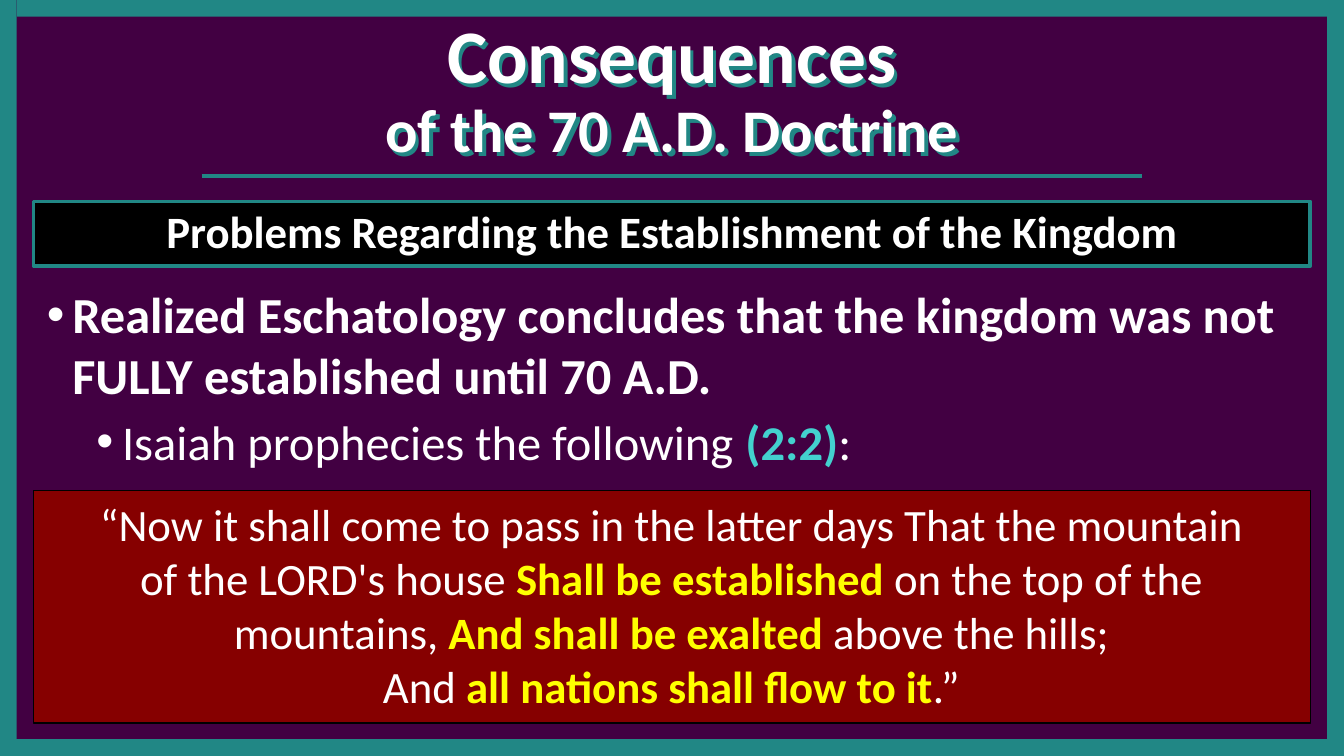
from typing import NamedTuple, Optional

import pptx
import pptx.dml.color
import pptx.enum.shapes
import pptx.enum.text
import pptx.oxml
import pptx.oxml.ns
import pptx.util
from pptx.util import Inches

COLORS = {
    "purple": "420042",
    "teal": "218785",
    "aqua": "43D1CE",
    "black": "000000",
    "maroon": "860000",
    "white": "FFFFFF",
    "yellow": "FFFF00",
}
FONT = "Calibri"
WIDTH = 10
HEIGHT = WIDTH * 9 / 16
BORDER = WIDTH / 80
MARGIN = 2 * BORDER
PANEL_WIDTH = WIDTH - 2 * MARGIN
NAMESPACE = pptx.oxml.ns.nsdecls("a")


class Area(NamedTuple):
    left: float
    top: float
    width: float
    height: float


class Panel(NamedTuple):
    area: Area
    fill: str
    line: Optional[str] = None
    line_width: float = 0


class Span(NamedTuple):
    text: str
    size: float
    color: str = "white"
    bold: bool = False


class Para(NamedTuple):
    spans: list[Span]
    bullet_indent: Optional[float] = None
    level: int = 0
    space_before: float = 0
    line_spacing: float = 1.0


def rgb(name: str) -> pptx.dml.color.RGBColor:
    return pptx.dml.color.RGBColor.from_string(COLORS[name])


def draw_panel(page, panel: Panel) -> None:
    shape = page.shapes.add_shape(
        pptx.enum.shapes.MSO_SHAPE.RECTANGLE, *map(Inches, panel.area))
    shape.shadow.inherit = False
    shape.fill.solid()
    shape.fill.fore_color.rgb = rgb(panel.fill)
    if panel.line:
        shape.line.color.rgb = rgb(panel.line)
        shape.line.width = pptx.util.Pt(panel.line_width)
    else:
        shape.line.fill.background()


def add_span(paragraph, span: Span) -> None:
    for index, piece in enumerate(span.text.split("\n")):
        if index:
            paragraph.add_line_break()
        if piece:
            run = paragraph.add_run()
            run.text = piece
            run.font.name = FONT
            run.font.size = pptx.util.Pt(span.size)
            run.font.bold = span.bold
            run.font.color.rgb = rgb(span.color)


def add_bullet(paragraph, indent: float) -> None:
    properties = paragraph._p.get_or_add_pPr()
    properties.set("marL", str(Inches(indent)))
    properties.set("indent", str(Inches(-0.19)))
    properties.append(pptx.oxml.parse_xml(
        f'<a:buFont {NAMESPACE} typeface="Arial"/>'))
    properties.append(pptx.oxml.parse_xml(
        f'<a:buChar {NAMESPACE} char="•"/>'))


def draw_text(page, area: Area, paras: list[Para], middle: bool = False):
    box = page.shapes.add_textbox(*map(Inches, area))
    frame = box.text_frame
    frame.word_wrap = True
    anchors = pptx.enum.text.MSO_ANCHOR
    frame.vertical_anchor = anchors.MIDDLE if middle else anchors.TOP
    for index, para in enumerate(paras):
        paragraph = frame.add_paragraph() if index else frame.paragraphs[0]
        paragraph.level = para.level
        paragraph.line_spacing = para.line_spacing
        if index:
            paragraph.space_before = pptx.util.Pt(para.space_before)
        if para.bullet_indent is None:
            paragraph.alignment = pptx.enum.text.PP_ALIGN.CENTER
        else:
            add_bullet(paragraph, para.bullet_indent)
        for span in para.spans:
            add_span(paragraph, span)
    return box


def add_text_shadow(box, color: str) -> None:
    box._element.spPr.append(pptx.oxml.parse_xml(
        f'<a:effectLst {NAMESPACE}><a:outerShdw dist="{Inches(0.04)}" '
        f'dir="2700000" algn="tl" rotWithShape="0">'
        f'<a:srgbClr val="{COLORS[color]}"/></a:outerShdw></a:effectLst>'))


def draw_rule(page, left: float, right: float, top: float) -> None:
    rule = page.shapes.add_connector(
        pptx.enum.shapes.MSO_CONNECTOR.STRAIGHT,
        Inches(left), Inches(top), Inches(right), Inches(top))
    rule.line.color.rgb = rgb("teal")
    rule.line.width = pptx.util.Pt(2)
    rule._element.spPr.append(
        pptx.oxml.parse_xml(f"<a:effectLst {NAMESPACE}/>"))


deck = pptx.Presentation()
deck.slide_width, deck.slide_height = Inches(WIDTH), Inches(HEIGHT)
page = deck.slides.add_slide(deck.slide_layouts[6])
page.background.fill.solid()
page.background.fill.fore_color.rgb = rgb("purple")

# Title with its rule
title = draw_text(page, Area(1.44, BORDER, 7.12, 1.12), [
    Para([Span("Consequences\n", 40.5, bold=True),
          Span("of the 70 A.D. Doctrine", 32.4, bold=True)],
         line_spacing=0.9),
], middle=True)
add_text_shadow(title, "teal")
draw_rule(page, 1.5, 8.5, 1.31)

# Bulleted points
draw_text(page, Area(MARGIN, 2.06, PANEL_WIDTH, 2.08), [
    Para([Span("Realized Eschatology concludes that the kingdom was not "
               "FULLY established until 70 A.D.", 27, bold=True)],
         bullet_indent=0.19),
    Para([Span("Isaiah prophecies the following ", 26),
          Span("(2:2)", 26, "aqua", True),
          Span(":", 26)],
         bullet_indent=0.56, level=1, space_before=3.8),
])

# Topic bar
draw_panel(page, Panel(Area(MARGIN, 1.5, PANEL_WIDTH, 0.48),
                       "black", "teal", 2))
draw_text(page, Area(MARGIN, 1.47, PANEL_WIDTH, 0.5), [
    Para([Span("Problems Regarding the Establishment of the Kingdom",
               24, bold=True)]),
])

# Quotation
draw_panel(page, Panel(Area(MARGIN, 3.65, PANEL_WIDTH, 1.73),
                       "maroon", "black", 0.75))
draw_text(page, Area(0.33, 3.65, 9.33, 1.72), [
    Para([
        Span("“Now it shall come to pass in the latter days "
             "That the mountain\nof the LORD's house ", 24),
        Span("Shall be established ", 24, "yellow", True),
        Span("on the top of the mountains, ", 24),
        Span("And shall be exalted ", 24, "yellow", True),
        Span("above the hills;\nAnd ", 24),
        Span("all nations shall flow to it", 24, "yellow", True),
        Span(".”", 24),
    ]),
])

# Frame around the page
for side in (
    Area(0, 0, BORDER, HEIGHT),
    Area(WIDTH - BORDER, 0, BORDER, HEIGHT),
    Area(BORDER, 0, 9.79, BORDER),
    Area(0, HEIGHT - BORDER, WIDTH, BORDER),
):
    draw_panel(page, Panel(side, "teal"))

deck.save("out.pptx")
